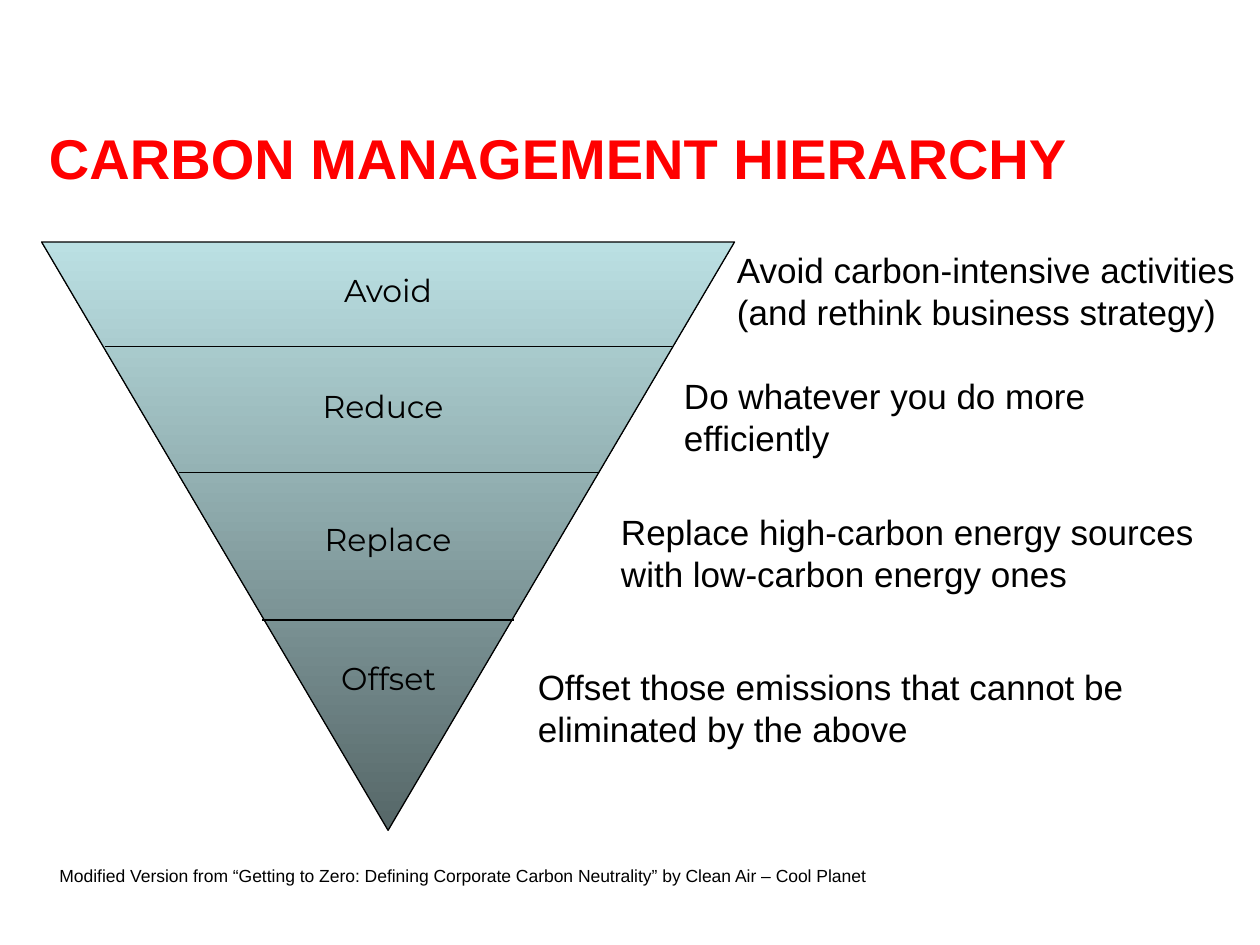
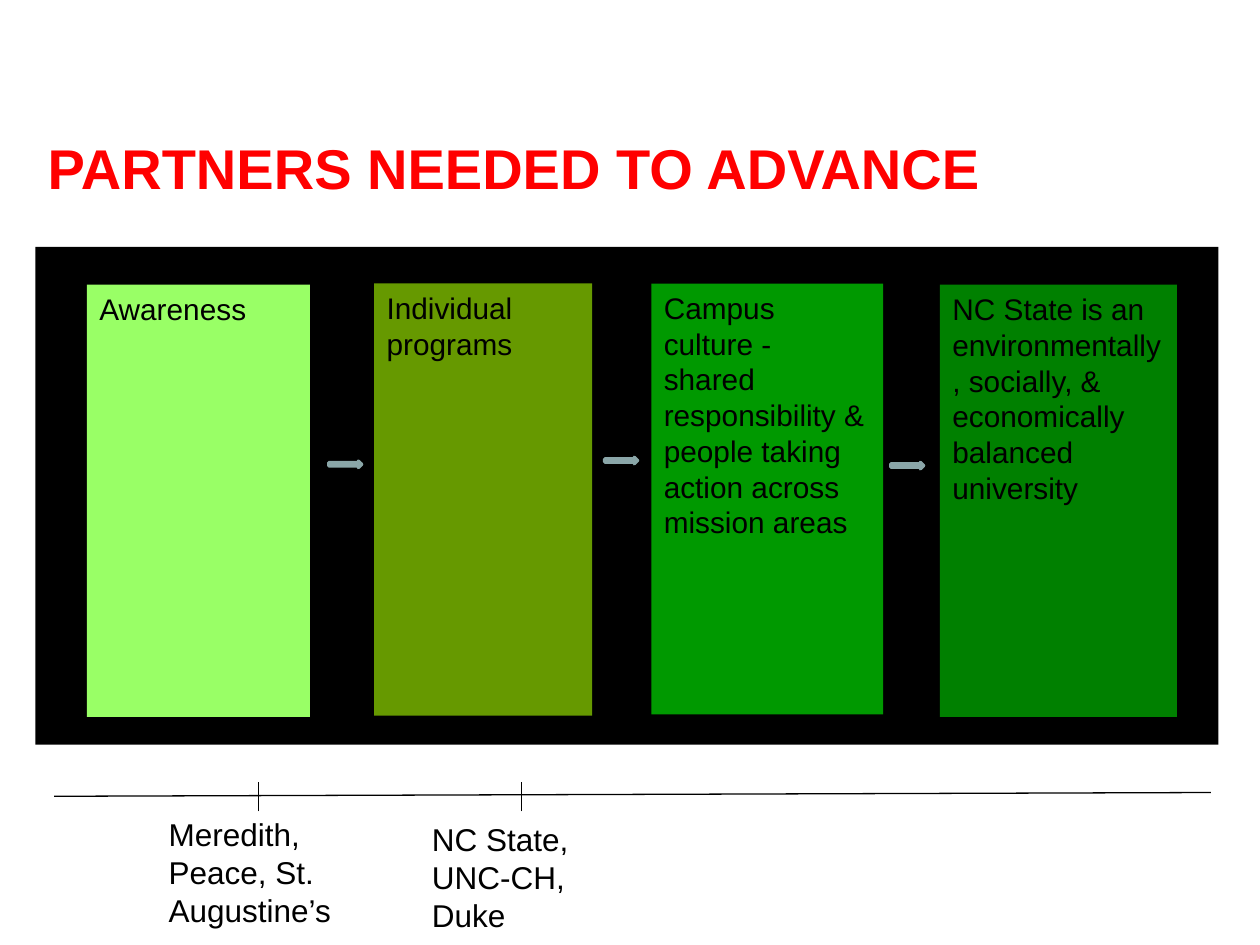
from pptx import Presentation
from pptx.dml.color import RGBColor
from pptx.enum.shapes import MSO_CONNECTOR, MSO_SHAPE
from pptx.enum.text import MSO_ANCHOR, PP_ALIGN
from pptx.oxml.ns import qn
from pptx.util import Emu, Pt
from lxml.etree import SubElement

PX = 9144  # 100 px to the inch
WIDE, HIGH = 1000, 750

RED = RGBColor(0xFF, 0x00, 0x00)
BLACK = RGBColor(0x00, 0x00, 0x00)
PALE = RGBColor(0xBB, 0xE0, 0xE3)
SLATE = RGBColor(0x56, 0x67, 0x68)
STEEL = RGBColor(0x8A, 0xA6, 0xA8)
LIME = RGBColor(0x99, 0xFF, 0x66)
OLIVE = RGBColor(0x66, 0x99, 0x00)
GREEN = RGBColor(0x00, 0x99, 0x00)
DEEP = RGBColor(0x00, 0x80, 0x00)

BODY = "Arial"
LABEL = "Montserrat"


def px(*sizes):
    return [Emu(size * PX) for size in sizes]


def write(shape, text, size, font=BODY, color=BLACK, bold=False,
          align=PP_ALIGN.LEFT, anchor=MSO_ANCHOR.TOP):
    frame = shape.text_frame
    frame.word_wrap = True
    frame.vertical_anchor = anchor
    para = frame.paragraphs[0]
    para.alignment = align
    run = para.add_run()
    run.text = text
    run.font.name = font
    run.font.size = Pt(size)
    run.font.bold = bold
    run.font.color.rgb = color


def add_text(slide, box, text, size, **style):
    write(slide.shapes.add_textbox(*px(*box)), text, size, **style)


def add_title(slide, box, text):
    add_text(slide, box, text, 32, color=RED, bold=True,
             anchor=MSO_ANCHOR.MIDDLE)


def add_form(slide, kind, box, fill=None, line=None, weight=0.75):
    """Add a preset shape; without a line colour it has no outline."""
    shape = slide.shapes.add_shape(kind, *px(*box))
    shape.shadow.inherit = False
    if fill is not None:
        shape.fill.solid()
        shape.fill.fore_color.rgb = fill
    if line is None:
        shape.line.fill.background()
    else:
        shape.line.color.rgb = line
        shape.line.width = Pt(weight)
    return shape


def add_line(slide, *ends):
    line = slide.shapes.add_connector(MSO_CONNECTOR.STRAIGHT, *px(*ends))
    line.line.color.rgb = BLACK
    line.line.width = Pt(0.75)
    SubElement(line._element.spPr, qn("a:effectLst"))


def add_funnel(slide, box):
    """Add a triangle standing on its tip, shaded darker downwards."""
    funnel = add_form(slide, MSO_SHAPE.ISOSCELES_TRIANGLE, box, line=BLACK)
    funnel.rotation = 180
    funnel.fill.gradient()
    funnel.fill.gradient_angle = 270
    for stop, color in zip(funnel.fill.gradient_stops, (SLATE, PALE)):
        stop.color.rgb = color


def draw_levels(slide):
    add_title(slide, (29, 62, 942, 125), "CARBON MANAGEMENT HIERARCHY")
    add_funnel(slide, (33, 192, 550, 467))

    # label, its left, top and width; note, its left, top and width
    levels = [
        ("Avoid", 74, 210, 468,
         "Avoid carbon-intensive activities (and rethink business strategy)",
         575, 192, 425),
        ("Reduce", 100, 302, 408,
         "Do whatever you do more efficiently", 533, 292, 425),
        ("Replace", 158, 408, 300,
         "Replace high-carbon energy sources with low-carbon energy ones",
         483, 400, 492),
        ("Offset", 200, 518, 217,
         "Offset those emissions that cannot be eliminated by the above",
         417, 523, 533),
    ]
    for label, x, y, w, note, left, top, width in levels:
        add_text(slide, (x, y, w, 40), label, 18, font=LABEL,
                 align=PP_ALIGN.CENTER)
        add_text(slide, (left, top, width, 77), note, 20)

    for left, right, y in [(83, 533, 275), (142, 475, 375), (208, 408, 492)]:
        add_line(slide, left, y, right, y)

    add_text(slide, (17, 682, 700, 27),
             "Modified Version from “Getting to Zero: Defining Corporate "
             "Carbon Neutrality” by Clean Air – Cool Planet",
             10, align=PP_ALIGN.CENTER)


def draw_stages(slide):
    add_title(slide, (28, 70, 939, 125), "PARTNERS NEEDED TO ADVANCE")
    add_form(slide, MSO_SHAPE.RECTANGLE, (28, 196, 939, 395), BLACK)

    stages = [
        ("Awareness", LIME, (69, 226, 177, 343)),
        ("Individual programs", OLIVE, (297, 225, 173, 343)),
        ("Campus culture - shared responsibility & people taking action "
         "across mission areas", GREEN, (517, 225, 184, 342)),
        ("NC State is an environmentally, socially, & economically balanced "
         "university", DEEP, (746, 226, 188, 343)),
    ]
    for text, fill, box in stages:
        write(add_form(slide, MSO_SHAPE.RECTANGLE, box, fill), text, 17)

    for x, y in [(261, 366), (480, 363), (707, 367)]:
        add_form(slide, MSO_SHAPE.RIGHT_ARROW, (x, y, 26, 5), PALE, STEEL, 2)

    add_line(slide, 43, 632, 961, 629)
    marks = [
        (205, "Meredith, Peace, St. Augustine’s", (124, 642, 189, 101)),
        (414, "NC State, UNC-CH, Duke", (333, 646, 170, 101)),
    ]
    for x, names, box in marks:
        add_line(slide, x, 644, x, 621)
        add_text(slide, box, names, 18)


def main():
    deck = Presentation()
    deck.slide_width, deck.slide_height = px(WIDE, HIGH)
    for draw in (draw_levels, draw_stages):
        draw(deck.slides.add_slide(deck.slide_layouts[6]))
    deck.save("out.pptx")


if __name__ == "__main__":
    main()
